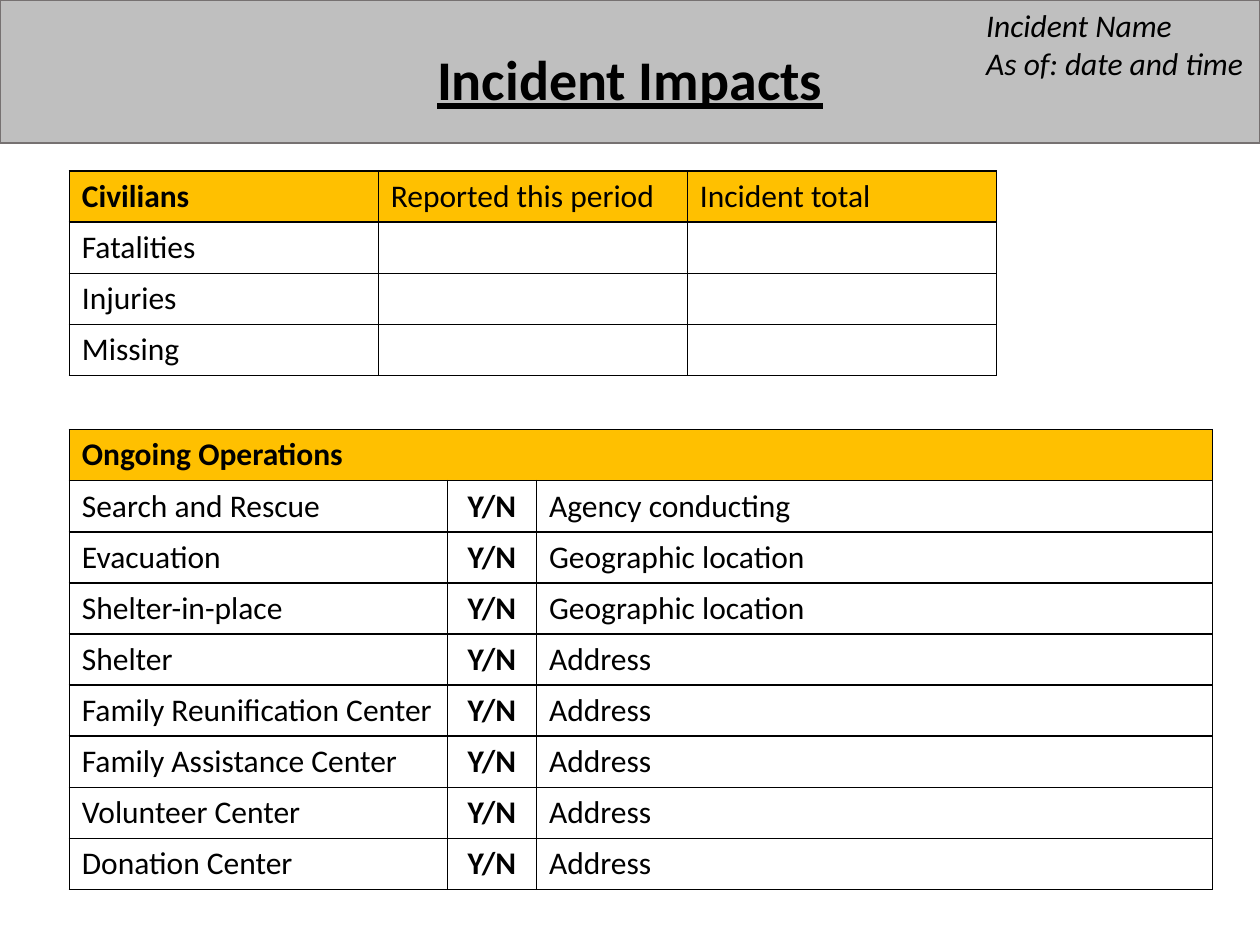
from lxml.etree import SubElement
from pptx import Presentation
from pptx.dml.color import RGBColor
from pptx.enum.shapes import MSO_SHAPE
from pptx.enum.text import MSO_AUTO_SIZE, PP_ALIGN
from pptx.oxml.ns import qn
from pptx.util import Pt

COLORS = {
    "band": "BFBFBF",
    "band_line": "767171",
    "header": "FFC000",
    "ink": "000000",
}
FONT = "Calibri"
ROW_HEIGHT = 29.2

CIVILIANS = [
    ["Civilians", "Reported this period", "Incident total"],
    ["Fatalities", "", ""],
    ["Injuries", "", ""],
    ["Missing", "", ""],
]
OPERATIONS = [
    ("Search and Rescue", "Agency conducting"),
    ("Evacuation", "Geographic location"),
    ("Shelter-in-place", "Geographic location"),
    ("Shelter", "Address"),
    ("Family Reunification Center", "Address"),
    ("Family Assistance Center", "Address"),
    ("Volunteer Center", "Address"),
    ("Donation Center", "Address"),
]


def rgb(name):
    return RGBColor.from_string(COLORS[name])


def add_run(p, text, size=18, bold=False, italic=False, underline=False):
    r = p.add_run()
    r.text = text
    r.font.name = FONT
    r.font.size = Pt(size)
    r.font.bold = bold
    r.font.italic = italic
    r.font.underline = underline
    r.font.color.rgb = rgb("ink")


def add_text(s, x, y, w, h, lines, align=PP_ALIGN.LEFT, wrap=True, **style):
    tf = s.shapes.add_textbox(Pt(x), Pt(y), Pt(w), Pt(h)).text_frame
    tf.word_wrap = wrap
    tf.auto_size = MSO_AUTO_SIZE.SHAPE_TO_FIT_TEXT
    for i, line in enumerate(lines):
        p = tf.add_paragraph() if i else tf.paragraphs[0]
        p.alignment = align
        add_run(p, line, **style)


def add_banner(s, x, y, w, h):
    sp = s.shapes.add_shape(MSO_SHAPE.RECTANGLE, Pt(x), Pt(y), Pt(w), Pt(h))
    sp.shadow.inherit = False
    sp.fill.solid()
    sp.fill.fore_color.rgb = rgb("band")
    sp.line.color.rgb = rgb("band_line")
    sp.line.width = Pt(1)
    add_text(s, x + w - 163.5, y, 163.5, 51,
             ["Incident Name", "As of: date and time"], wrap=False, italic=True)
    add_text(s, x + 101, y + 21.7, w - 202, 46, ["Incident Impacts"],
             PP_ALIGN.CENTER, size=32, bold=True, underline=True)


def add_borders(cell):
    tcPr = cell._tc.get_or_add_tcPr()
    for side in ("lnL", "lnR", "lnT", "lnB"):
        ln = SubElement(tcPr, qn(f"a:{side}"), w=str(Pt(1)))
        fill = SubElement(ln, qn("a:solidFill"))
        SubElement(fill, qn("a:srgbClr"), val=COLORS["ink"])


def add_grid(s, x, y, widths, rows):
    table = s.shapes.add_table(len(rows), len(widths), Pt(x), Pt(y),
                               Pt(sum(widths)), Pt(ROW_HEIGHT * len(rows))).table
    table.first_row = False
    table.horz_banding = False
    for column, width in zip(table.columns, widths):
        column.width = Pt(width)
    for i, values in enumerate(rows):
        table.rows[i].height = Pt(ROW_HEIGHT)
        for j, value in enumerate(values):
            cell = table.cell(i, j)
            add_borders(cell)
            if i == 0:
                cell.fill.solid()
                cell.fill.fore_color.rgb = rgb("header")
            else:
                cell.fill.background()
            if value:
                p = cell.text_frame.paragraphs[0]
                if value == "Y/N":
                    p.alignment = PP_ALIGN.CENTER
                add_run(p, value, bold=value == "Y/N" or i == j == 0)
    return table


def add_civilians(s, x, y, w):
    add_grid(s, x, y, [w / 3] * 3, CIVILIANS)


def add_operations(s, x, y, w):
    rows = [["Ongoing Operations", "", ""]]
    rows += [[name, "Y/N", detail] for name, detail in OPERATIONS]
    table = add_grid(s, x, y, [216, 51, w - 267], rows)
    table.cell(0, 0).merge(table.cell(0, 2))


def main():
    prs = Presentation()
    prs.slide_width = Pt(720)
    prs.slide_height = Pt(540)
    s = prs.slides.add_slide(prs.slide_layouts[6])
    add_banner(s, 0, 0, 720, 81.8)
    add_civilians(s, 39.6, 97.8, 529.8)
    add_operations(s, 39.6, 245.5, 653.2)
    prs.save("out.pptx")


if __name__ == "__main__":
    main()
